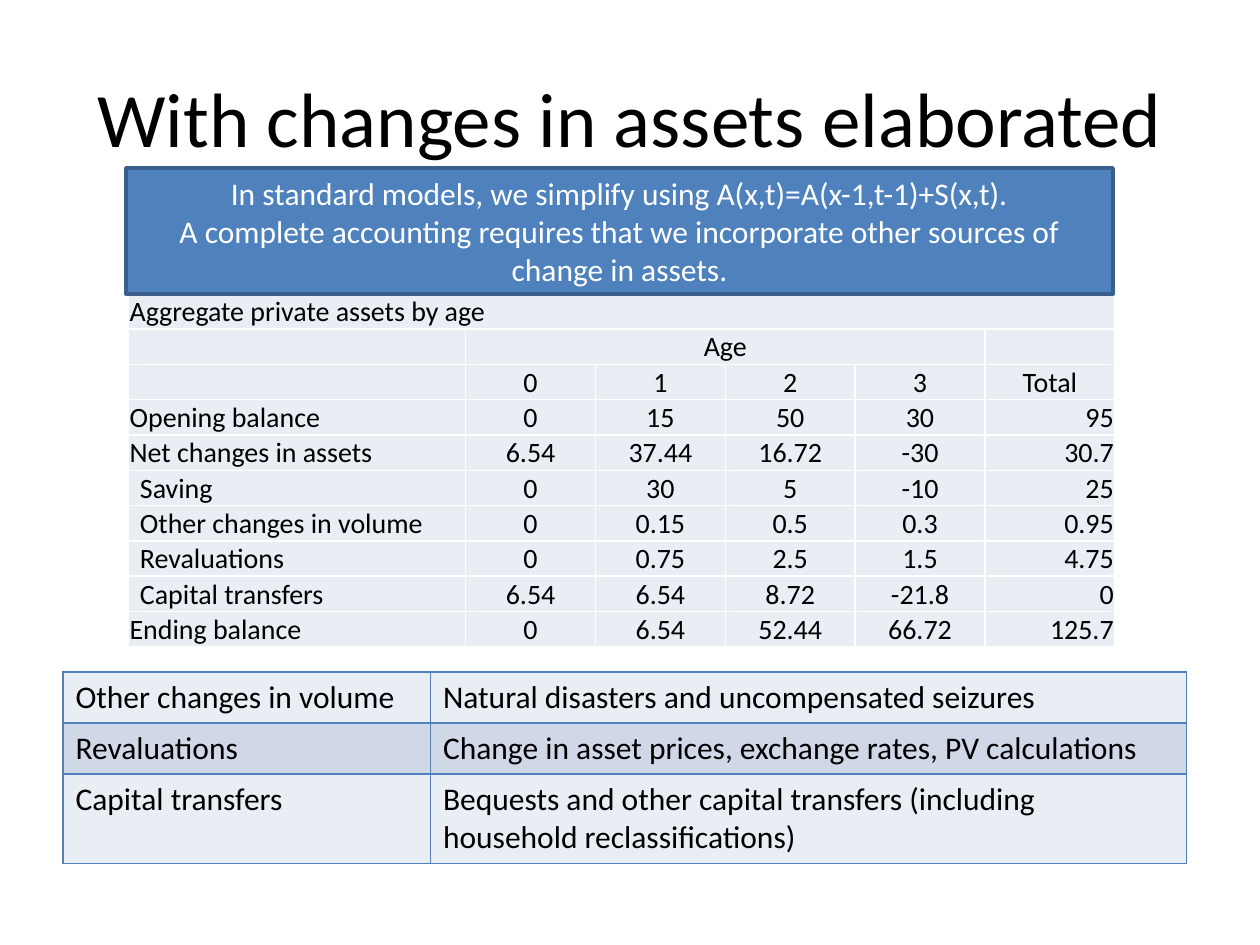
from lxml import etree
from pptx import Presentation
from pptx.dml.color import RGBColor
from pptx.enum import shapes, text
from pptx.oxml import ns
from pptx.util import Pt

BLACK = RGBColor(0x00, 0x00, 0x00)
WHITE = RGBColor(0xFF, 0xFF, 0xFF)
BLUE = RGBColor(0x4F, 0x81, 0xBD)
NAVY = RGBColor(0x3A, 0x5F, 0x8C)
PALE = RGBColor(0xE9, 0xED, 0xF4)
MIST = RGBColor(0xD0, 0xD8, 0xE8)

LEFT, CENTER, RIGHT = text.PP_ALIGN.LEFT, text.PP_ALIGN.CENTER, text.PP_ALIGN.RIGHT
TOP, MIDDLE, BOTTOM = text.MSO_ANCHOR.TOP, text.MSO_ANCHOR.MIDDLE, text.MSO_ANCHOR.BOTTOM

TIGHT = {"margin_left": Pt(0.6), "margin_top": Pt(0.6), "margin_right": Pt(0.6),
         "margin_bottom": Pt(0), "vertical_anchor": BOTTOM}
INDENTED = {**TIGHT, "margin_left": Pt(6.5)}
ROOMY = {"vertical_anchor": TOP}

ASSETS = [
    ["Aggregate private assets by age", "", "", "", "", ""],
    ["", "Age", "", "", "", ""],
    ["", "0", "1", "2", "3", "Total"],
    ["Opening balance", "0", "15", "50", "30", "95"],
    ["Net changes in assets", "6.54", "37.44", "16.72", "-30", "30.7"],
    ["Saving", "0", "30", "5", "-10", "25"],
    ["Other changes in volume", "0", "0.15", "0.5", "0.3", "0.95"],
    ["Revaluations", "0", "0.75", "2.5", "1.5", "4.75"],
    ["Capital transfers", "6.54", "6.54", "8.72", "-21.8", "0"],
    ["Ending balance", "0", "6.54", "52.44", "66.72", "125.7"],
]
HEADER_ROWS = 3
COMPONENT_ROWS = range(5, 9)

SOURCES = [
    ["Other changes in volume", "Natural disasters and uncompensated seizures"],
    ["Revaluations", "Change in asset prices, exchange rates, PV calculations"],
    ["Capital transfers",
     "Bequests and other capital transfers (including household reclassifications)"],
]


def assets_format(row, col):
    if col == 0:
        return LEFT, PALE, INDENTED if row in COMPONENT_ROWS else TIGHT
    if col == 5 and row >= HEADER_ROWS:
        return RIGHT, PALE, TIGHT
    return CENTER, PALE, TIGHT


def sources_format(row, col):
    return LEFT, MIST if row % 2 else PALE, ROOMY


class Deck:
    font = "Calibri"

    def __init__(self, width, height):
        self.prs = Presentation()
        self.prs.slide_width, self.prs.slide_height = Pt(width), Pt(height)
        self.s = self.prs.slides.add_slide(self.prs.slide_layouts[5])

    def fill_text(self, tf, lines, size, color, align):
        for i, line in enumerate(lines):
            p = tf.add_paragraph() if i else tf.paragraphs[0]
            p.alignment = align
            if not line:
                etree.SubElement(p._p, ns.qn("a:endParaRPr"), sz=str(size * 100))
                continue
            r = p.add_run()
            r.text = line
            for name, value in {"name": self.font, "size": Pt(size), "bold": False}.items():
                setattr(r.font, name, value)
            r.font.color.rgb = color

    def title(self, line, box):
        sp = self.s.shapes.title
        sp.left, sp.top, sp.width, sp.height = map(Pt, box)
        sp.text_frame.vertical_anchor = MIDDLE
        self.fill_text(sp.text_frame, [line], 44, BLACK, CENTER)

    def banner(self, lines, box):
        sp = self.s.shapes.add_shape(shapes.MSO_SHAPE.RECTANGLE, *map(Pt, box))
        sp.shadow.inherit = False
        sp.fill.solid()
        sp.fill.fore_color.rgb = BLUE
        sp.line.color.rgb = NAVY
        sp.line.width = Pt(2)
        sp.text_frame.word_wrap = True
        sp.text_frame.vertical_anchor = MIDDLE
        self.fill_text(sp.text_frame, lines, 18, WHITE, CENTER)

    def border(self, cell, color):
        tc_pr = cell._tc.get_or_add_tcPr()
        for i, side in enumerate(("a:lnL", "a:lnR", "a:lnT", "a:lnB")):
            ln = etree.Element(ns.qn(side), w=str(Pt(1)))
            fill = etree.SubElement(ln, ns.qn("a:solidFill"))
            etree.SubElement(fill, ns.qn("a:srgbClr"), val=str(color))
            tc_pr.insert(i, ln)

    def table(self, rows, left, top, widths, row_height, size, line, cell_format, spans=()):
        frame = self.s.shapes.add_table(len(rows), len(widths), Pt(left), Pt(top),
                                        Pt(sum(widths)), Pt(row_height * len(rows)))
        table = frame.table
        table.first_row = table.horz_banding = False
        for column, width in zip(table.columns, widths):
            column.width = Pt(width)
        for i, row in enumerate(rows):
            table.rows[i].height = Pt(row_height)
            for j, value in enumerate(row):
                cell = table.cell(i, j)
                align, fill, layout = cell_format(i, j)
                for name, setting in layout.items():
                    setattr(cell, name, setting)
                cell.fill.solid()
                cell.fill.fore_color.rgb = fill
                self.border(cell, line)
                self.fill_text(cell.text_frame, [value], size, BLACK, align)
        for row, first, last in spans:
            table.cell(row, first).merge(table.cell(row, last))


def main():
    deck = Deck(720, 540)
    deck.title("With changes in assets elaborated", (36, 21.6, 648, 90))
    deck.table(ASSETS, 73.5, 167.8, [192.6] + [74.2] * 5, 18.72, 16, WHITE,
               assets_format, spans=[(0, 0, 5), (1, 1, 4)])
    deck.table(SOURCES, 36, 384, [210, 432], 29.2, 18, BLUE, sources_format)
    deck.banner(["In standard models, we simplify using A(x,t)=A(x-1,t-1)+S(x,t).",
                 "A complete accounting requires that we incorporate other sources of "
                 "change in assets."], (72, 96, 564, 72))
    deck.prs.save("out.pptx")


if __name__ == "__main__":
    main()
